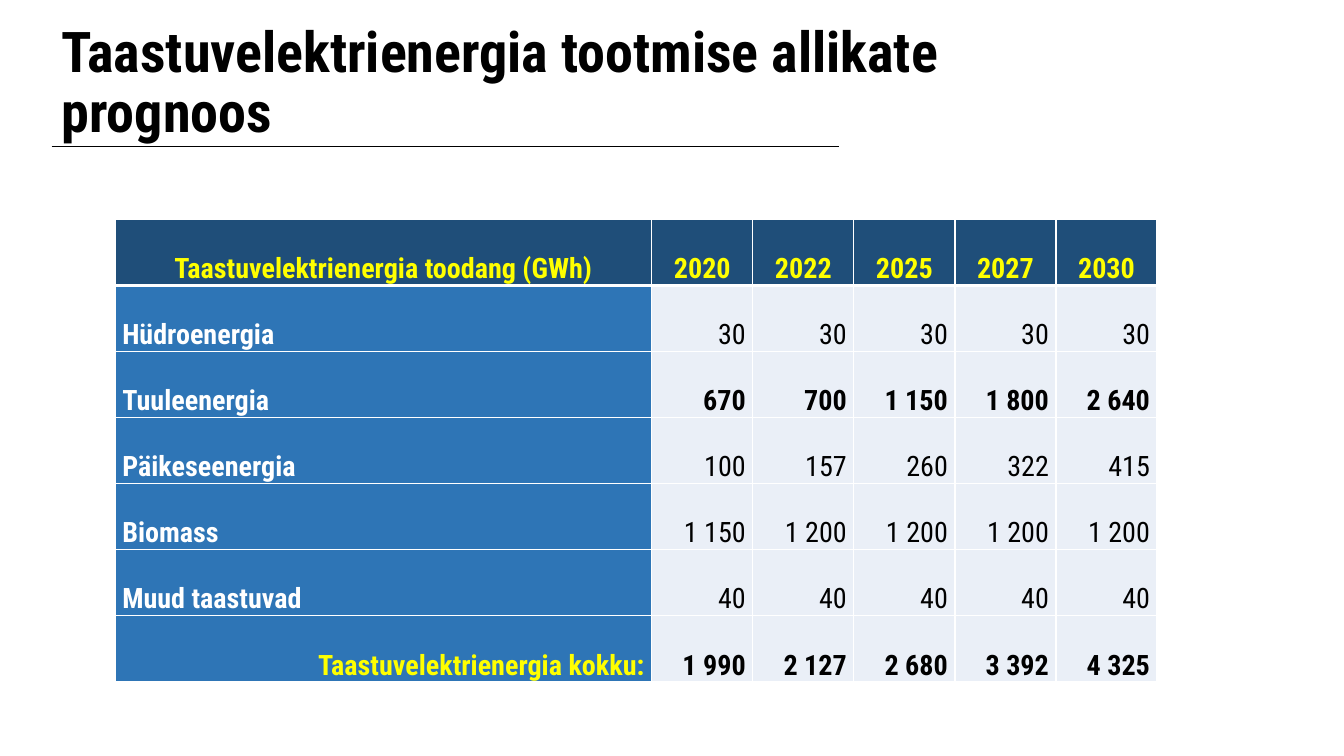
from lxml.etree import SubElement
from pptx import Presentation
from pptx.dml.color import RGBColor
from pptx.enum.shapes import MSO_CONNECTOR as Connector
from pptx.enum.text import MSO_ANCHOR as Anchor, MSO_AUTO_SIZE as AutoSize, PP_ALIGN as Align
from pptx.oxml import parse_xml
from pptx.oxml.ns import nsdecls, qn
from pptx.util import Inches, Pt

COLORS = {
    "text": "000000",
    "white": "FFFFFF",
    "accent": "FFFF00",
    "header": "1F4E79",
    "label": "2E75B6",
    "value": "EAEFF7",
}

YEARS = ["2020", "2022", "2025", "2027", "2030"]
SOURCES = {
    "Hüdroenergia": ["30"] * 5,
    "Tuuleenergia": ["670", "700", "1 150", "1 800", "2 640"],
    "Päikeseenergia": ["100", "157", "260", "322", "415"],
    "Biomass": ["1 150"] + ["1 200"] * 4,
    "Muud taastuvad": ["40"] * 5,
}
TOTALS = ["1 990", "2 127", "2 680", "3 392", "4 325"]


class SlideBuilder:
    """Holds the style and the current slide, and adds elements to it."""

    font_name = "Roboto Condensed"

    def __init__(self, deck):
        self.page = deck.slides.add_slide(deck.slide_layouts[5])

    def color(self, name):
        return RGBColor.from_string(COLORS[name])

    def apply(self, target, formats):
        for name, value in formats.items():
            setattr(target, name, value)

    def add_text(self, frame, text, size, color, bold, align, spacing):
        para = frame.paragraphs[0]
        self.apply(para, {"alignment": align, "line_spacing": spacing})
        span = para.add_run()
        span.text = text
        self.apply(span.font, {"name": self.font_name, "size": Pt(size), "bold": bold})
        span.font.color.rgb = self.color(color)

    def title(self, text, left, top, width, height):
        box = self.page.shapes.title
        self.apply(box, {"left": Inches(left), "top": Inches(top),
                         "width": Inches(width), "height": Inches(height)})
        self.apply(box.text_frame, {"word_wrap": True, "auto_size": AutoSize.NONE,
                                    "vertical_anchor": Anchor.MIDDLE})
        self.add_text(box.text_frame, text, 40, "text", True, Align.LEFT, 0.9)

    def rule(self, left, right, top):
        line = self.page.shapes.add_connector(
            Connector.STRAIGHT, Inches(left), Inches(top), Inches(right), Inches(top))
        line.line.color.rgb = self.color("text")
        line.line.width = Pt(0.75)
        SubElement(line._element.spPr, qn("a:effectLst"))

    def borders(self, cell, widths):
        properties = cell._tc.get_or_add_tcPr()
        for index, (side, width) in enumerate(widths.items()):
            properties.insert(index, parse_xml(
                f'<a:ln{side} {nsdecls("a")} w="{Pt(width)}"><a:solidFill>'
                f'<a:srgbClr val="{COLORS["white"]}"/></a:solidFill></a:ln{side}>'))

    def cell(self, cell, text, fill, color, bold, align, widths):
        self.apply(cell, {"margin_left": Inches(0.07), "margin_right": Inches(0.07),
                          "margin_top": 0, "margin_bottom": 0})
        cell.fill.solid()
        cell.fill.fore_color.rgb = self.color(fill)
        self.borders(cell, widths)
        self.add_text(cell.text_frame, text, 20, color, bold, align, 2.0)

    def table(self, rows, left, top, column_widths, row_height):
        frame = self.page.shapes.add_table(
            len(rows), len(column_widths), Inches(left), Inches(top),
            Inches(sum(column_widths)), Inches(row_height * len(rows)))
        table = frame.table
        table.horz_banding = False
        for column, width in zip(table.columns, column_widths):
            column.width = Inches(width)
        for row_index, (texts, label_style, value_style) in enumerate(rows):
            widths = {"L": 1, "R": 1, "T": 3 if row_index == 1 else 1,
                      "B": 3 if row_index == 0 else 1}
            for column_index, text in enumerate(texts):
                style = value_style if column_index else label_style
                self.cell(table.cell(row_index, column_index), text, *style, widths)


def main():
    deck = Presentation()
    deck.slide_width, deck.slide_height = Inches(13.3), Inches(7.48)
    builder = SlideBuilder(deck)
    builder.title("Taastuvelektrienergia tootmise allikate prognoos", 0.51, 0.5, 10.95, 0.67)
    builder.rule(0.51, 8.3, 1.45)

    header = ("header", "accent", True, Align.CENTER)
    label = ("label", "white", True, Align.JUSTIFY)
    total = ("label", "accent", True, Align.RIGHT)
    plain = ("value", "text", False, Align.RIGHT)
    strong = ("value", "text", True, Align.RIGHT)
    rows = [(["Taastuvelektrienergia toodang (GWh)", *YEARS], header, header)]
    for source, values in SOURCES.items():
        rows.append(([source, *values], label, strong if source == "Tuuleenergia" else plain))
    rows.append((["Taastuvelektrienergia kokku:", *TOTALS], total, strong))
    builder.table(rows, 1.14, 2.17, [5.31] + [1] * len(YEARS), 0.65)
    deck.save("out.pptx")


if __name__ == "__main__":
    main()
